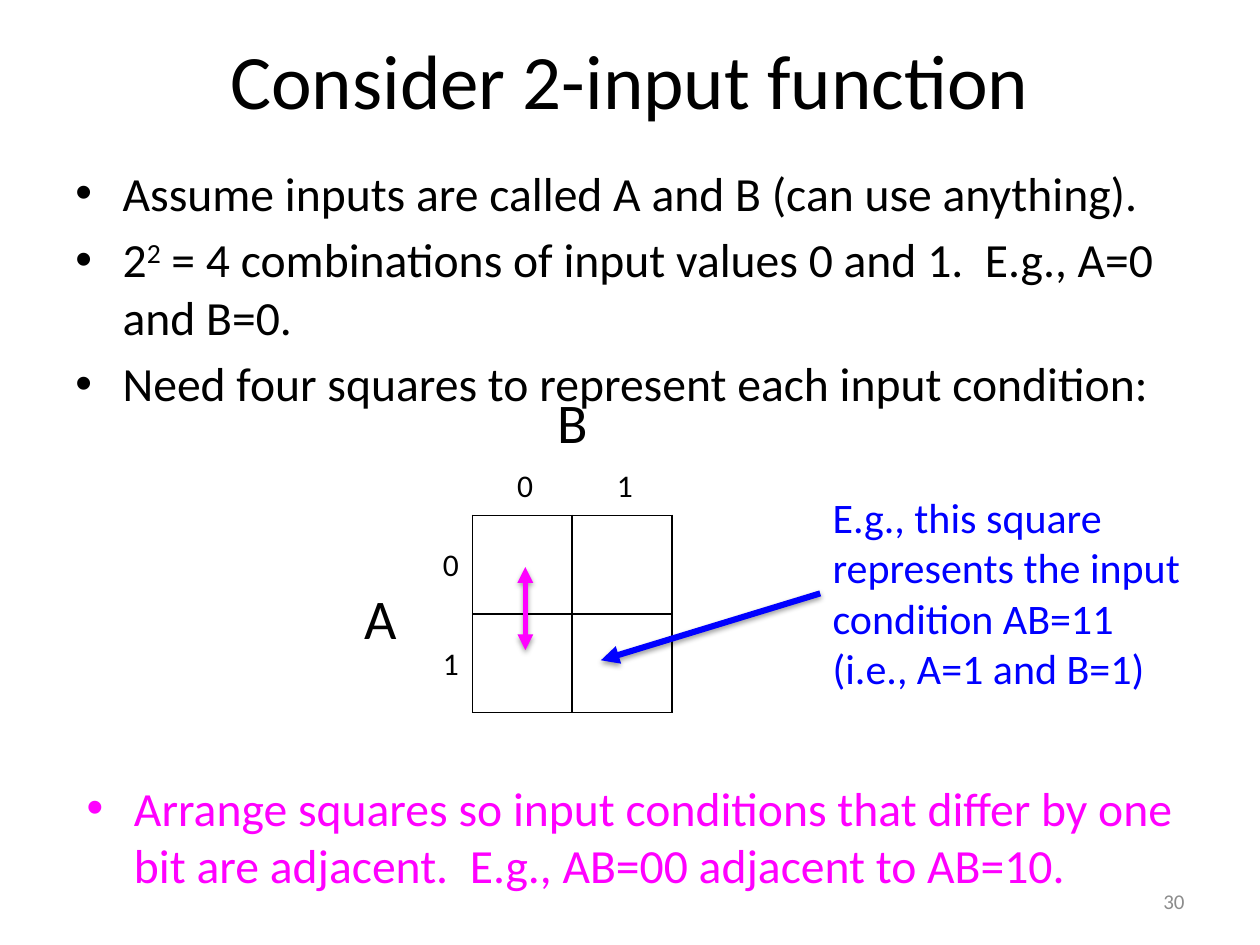
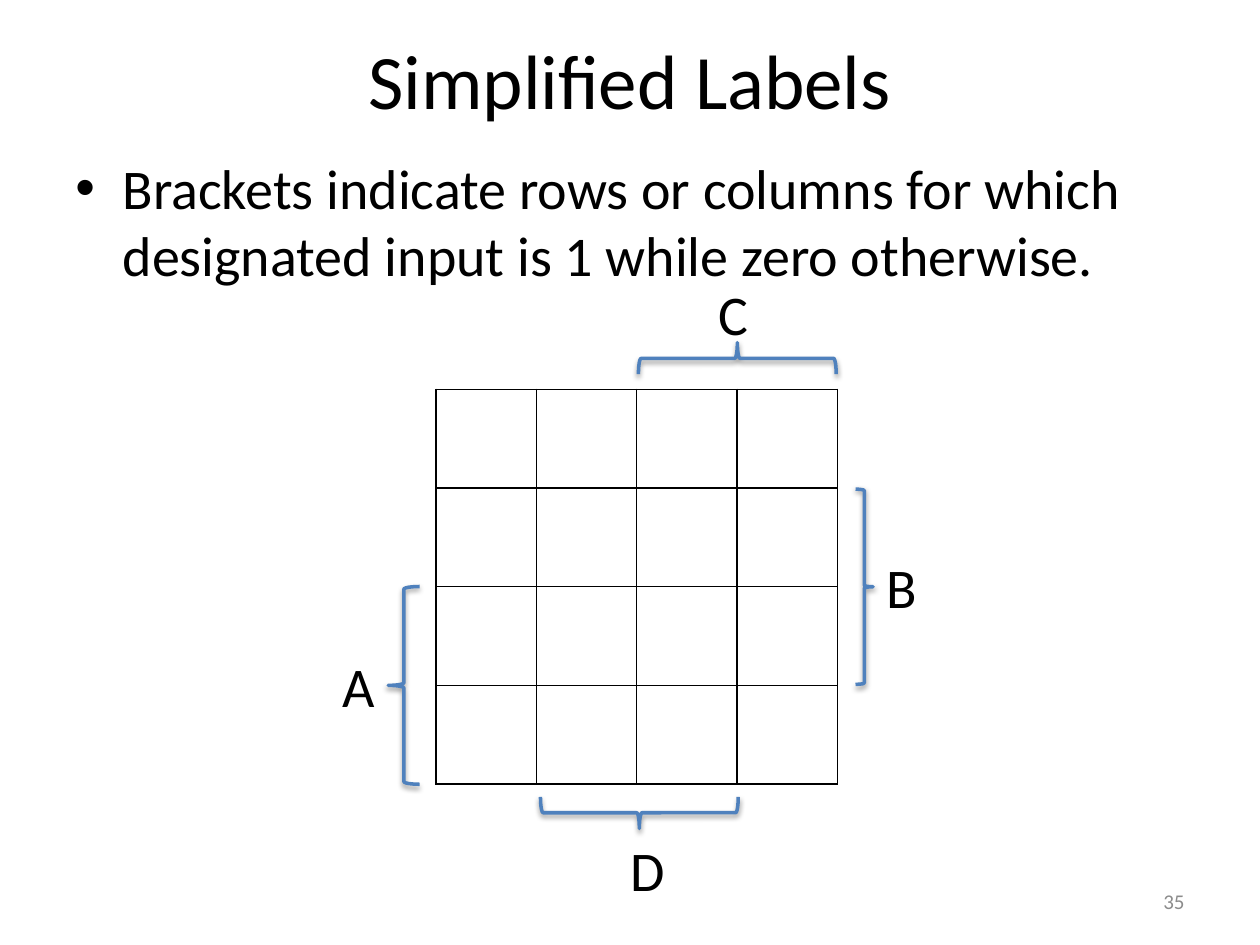
import pptx
import pptx.dml.color
import pptx.enum.shapes
import pptx.enum.text
import pptx.oxml
import pptx.oxml.ns
import pptx.util
from lxml import etree

Pt = pptx.util.Pt
ALIGN = pptx.enum.text.PP_ALIGN
ANCHOR = pptx.enum.text.MSO_ANCHOR
BRACE = pptx.enum.shapes.MSO_SHAPE

FONT = "Calibri"
BLACK, GREY = "000000", "8C8C8C"
BLUE, MAGENTA, BRACE_BLUE = "0000FF", "FF00FF", "4F81BD"
INDENT = 27


def color(hex_code):
    """Turn a hex string into a colour."""
    return pptx.dml.color.RGBColor.from_string(hex_code)


def child(parent, tag, **attributes):
    """Append a drawing element with the given attributes."""
    element = etree.SubElement(parent, pptx.oxml.ns.qn("a:" + tag))
    for key, value in attributes.items():
        element.set(key, str(value))
    return element


def add_text(slide, text, left, top, width, height, size=32, ink=BLACK,
             align=ALIGN.LEFT, anchor=ANCHOR.TOP, wrap=True, bullet=False):
    """Add a text box, one paragraph a line, with ^marks^ around superscripts."""
    frame = slide.shapes.add_textbox(Pt(left), Pt(top), Pt(width), Pt(height)).text_frame
    frame.word_wrap = wrap
    frame.vertical_anchor = anchor
    for index, line in enumerate(text.split("\n")):
        paragraph = frame.add_paragraph() if index else frame.paragraphs[0]
        paragraph.alignment = align
        if bullet:
            paragraph.space_before = Pt(size * 0.2)
            properties = paragraph._p.get_or_add_pPr()
            properties.set("marL", str(Pt(INDENT)))
            properties.set("indent", str(-Pt(INDENT)))
            child(properties, "buFont", typeface="Arial")
            child(properties, "buChar", char="•")
        for position, piece in enumerate(line.split("^")):
            run = paragraph.add_run()
            run.text = piece
            run.font.name = FONT
            run.font.size = Pt(size)
            run.font.color.rgb = color(ink)
            if position % 2:
                run._r.get_or_add_rPr().set("baseline", "30000")


def add_label(slide, text, center_x, center_y, size=32):
    """Add a short label around a centre point."""
    width, height = size + 2, size * 1.22 + 7.2
    add_text(slide, text, center_x - width / 2, center_y - height / 2, width, height,
             size=size, align=ALIGN.CENTER, wrap=False)


def add_frame(presentation, title, number):
    """Add a slide with its title and slide number."""
    slide = presentation.slides.add_slide(presentation.slide_layouts[6])
    add_text(slide, title, 36, 0, 648, 90, size=44, align=ALIGN.CENTER, anchor=ANCHOR.MIDDLE)
    add_text(slide, number, 516, 500.5, 168, 28.75, size=12, ink=GREY,
             align=ALIGN.RIGHT, anchor=ANCHOR.MIDDLE)
    return slide


def add_map(slide, left, top, count, cell_width, cell_height):
    """Add an empty square map of bordered cells."""
    grid = slide.shapes.add_table(count, count, Pt(left), Pt(top),
                                  Pt(count * cell_width), Pt(count * cell_height)).table
    grid.first_row = grid.horz_banding = False
    for cell in grid.iter_cells():
        properties = cell._tc.get_or_add_tcPr()
        for side in ("lnL", "lnR", "lnT", "lnB"):
            border = child(properties, side, w=Pt(1))
            child(child(border, "solidFill"), "srgbClr", val=BLACK)
        cell.fill.background()


def add_shadow(properties):
    """Add a soft shadow below a line or brace."""
    effects = properties.find(pptx.oxml.ns.qn("a:effectLst"))
    if effects is None:
        effects = child(properties, "effectLst")
    shadow = child(effects, "outerShdw", blurRad=Pt(3.1), dist=Pt(1.6),
                   dir=5400000, rotWithShape=0)
    child(child(shadow, "srgbClr", val=BLACK), "alpha", val=38000)


def add_arrow(slide, start, end, ink, weight, ends=("tailEnd",)):
    """Add a straight arrow with triangles at the given ends."""
    arrow = slide.shapes.add_connector(pptx.enum.shapes.MSO_CONNECTOR.STRAIGHT,
                                       *map(Pt, start + end))
    arrow.line.color.rgb = color(ink)
    arrow.line.width = Pt(weight)
    for tip in ends:
        child(arrow.line._get_or_add_ln(), tip, type="triangle")
    add_shadow(arrow._element.spPr)


def add_brace(slide, center_x, center_y, depth=18, length=113, kind=BRACE.LEFT_BRACE, turn=0):
    """Add a brace around a centre point."""
    brace = slide.shapes.add_shape(kind, Pt(center_x - depth / 2), Pt(center_y - length / 2),
                                   Pt(depth), Pt(length))
    brace.rotation = turn
    brace.fill.background()
    brace.line.color.rgb = color(BRACE_BLUE)
    brace.line.width = Pt(2)
    brace.shadow.inherit = False
    add_shadow(brace._element.spPr)


def build_two_input(presentation):
    """Build the slide on the map of two inputs."""
    slide = add_frame(presentation, "Consider 2-input function", "30")
    add_text(slide, "Assume inputs are called A and B (can use anything).\n"
             "2^2^ = 4 combinations of input values 0 and 1.  E.g., A=0 and B=0.\n"
             "Need four squares to represent each input condition:",
             36, 90, 648, 134, size=27.2, bullet=True)
    left, top, width, height = 270, 294.5, 57, 56.4
    add_map(slide, left, top, 2, width, height)
    add_label(slide, "A", 217.4, 352.8)
    add_label(slide, "B", 327.2, 241.2)
    for bit in range(2):
        add_label(slide, str(bit), left + (bit + 0.5) * width, 277.2, size=18)
        add_label(slide, str(bit), 256, top + (bit + 0.5) * height, size=18)
    add_arrow(slide, (468.7, 339.1), (343.4, 377.3), BLUE, 3.5)
    add_text(slide, "E.g., this square represents the input condition AB=11 (i.e., A=1 and B=1)",
             468.7, 277.2, 222.5, 124, size=24, ink=BLUE)
    add_text(slide, "Arrange squares so input conditions that differ by one bit are adjacent."
             "  E.g., AB=00 adjacent to AB=10.",
             42.5, 441.4, 648, 92, size=27.2, ink=MAGENTA, bullet=True)
    add_arrow(slide, (300.2, 324), (300.2, 371.5), MAGENTA, 3, ("headEnd", "tailEnd"))


def build_simplified(presentation):
    """Build the slide on the map with bracket labels."""
    slide = add_frame(presentation, "Simplified Labels", "35")
    add_text(slide, "Brackets indicate rows or columns for which designated input is 1 "
             "while zero otherwise.", 36, 84.2, 648, 108, bullet=True)
    left, top, width, height = 249.1, 222.5, 57.4, 56.4
    add_map(slide, left, top, 4, width, height)
    add_brace(slide, 230.8, top + 3 * height)
    add_brace(slide, 493.9, top + 2 * height, depth=10, length=111.6, kind=BRACE.RIGHT_BRACE)
    add_brace(slide, left + 3 * width, 204.8, turn=90)
    add_brace(slide, left + 2 * width + 1.5, 464.4, turn=270)
    for name, center_x, center_y in (("A", 205.2, 391.7), ("B", 515.2, 335.5),
                                     ("C", 419, 179.3), ("D", 370, 496.8)):
        add_label(slide, name, center_x, center_y)


def main():
    """Build and save the presentation."""
    presentation = pptx.Presentation()
    presentation.slide_width, presentation.slide_height = Pt(720), Pt(540)
    build_two_input(presentation)
    build_simplified(presentation)
    presentation.save("out.pptx")


if __name__ == "__main__":
    main()
